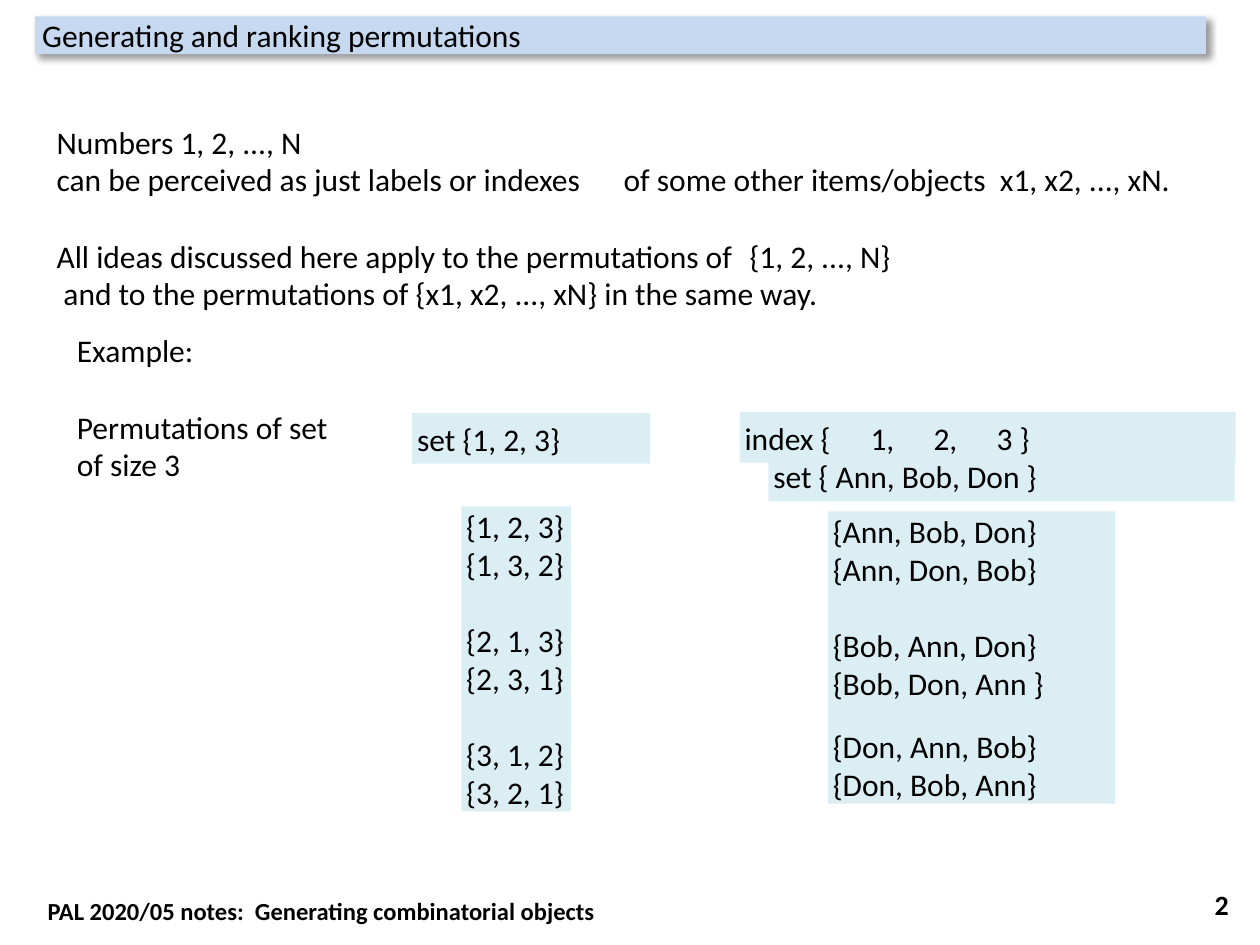
from lxml import etree
from pptx import Presentation
from pptx import util as u
from pptx.dml.color import RGBColor
from pptx.enum import shapes, text
from pptx.oxml import ns

FONT = "Calibri"
BLACK, TITLE_BLUE, PANEL_BLUE = "000000", "C6D9F1", "DBEEF4"
LINE = 22  # points taken by one blank line of 18 pt text
LIST_INSETS = (0.1, 0, 0.1, 0)
HEADING_INSETS = (0.1, 0.13, 0.1, 0.13)
TEXT_INSETS = (0.25, 0.13, 0.25, 0.13)


def color(hex_value):
    return RGBColor.from_string(hex_value)


def add_xml(parent, tag, **attributes):
    return etree.SubElement(parent, ns.qn(tag), attributes)


def place(shape, box):
    for side, length in zip(("left", "top", "width", "height"), box):
        setattr(shape, side, u.Cm(length))


def fill_solid(shape, hex_value):
    shape.fill.solid()
    shape.fill.fore_color.rgb = color(hex_value)


def write(shape, lines, insets, anchor=text.MSO_ANCHOR.TOP, size=18,
          bold=False, align=text.PP_ALIGN.LEFT):
    """Fill the shape; a line is a string or (string, options), with options
    before (pt), indent (cm) and tabs (cm)."""
    frame = shape.text_frame
    frame.word_wrap = True
    frame.auto_size = text.MSO_AUTO_SIZE.NONE
    frame.vertical_anchor = anchor
    for side, length in zip(("left", "top", "right", "bottom"), insets):
        setattr(frame, f"margin_{side}", u.Cm(length))
    for number, line in enumerate(lines):
        content, options = (line, {}) if isinstance(line, str) else line
        paragraph = frame.add_paragraph() if number else frame.paragraphs[0]
        paragraph.alignment = align
        paragraph.space_before = u.Pt(options.get("before", 0))
        properties = paragraph._p.get_or_add_pPr()
        properties.set("marL", str(u.Cm(options.get("indent", 0))))
        properties.set("indent", "0")
        add_xml(properties, "a:buNone")
        if "tabs" in options:
            stops = add_xml(properties, "a:tabLst")
            for position in options["tabs"]:
                add_xml(stops, "a:tab", pos=str(u.Cm(position)), algn="l")
        run = paragraph.add_run()
        run.text = content
        for name, value in dict(name=FONT, size=u.Pt(size), bold=bold).items():
            setattr(run.font, name, value)
        run.font.color.rgb = color(BLACK)


def add_soft_shadow(shape):
    shape.shadow.inherit = False
    effects = shape._element.spPr.find(ns.qn("a:effectLst"))
    shadow = add_xml(effects, "a:outerShdw", blurRad=str(u.Pt(4)),
                     dist=str(u.Pt(3)), dir="2700000", algn="tl",
                     rotWithShape="0")
    black = add_xml(shadow, "a:srgbClr", val=BLACK)
    add_xml(black, "a:alpha", val="40000")


def add_title(slide, content):
    title = slide.shapes.title
    place(title, (0.71, 0.33, 23.6, 0.76))
    fill_solid(title, TITLE_BLUE)
    add_soft_shadow(title)
    write(title, [content], (0.14, 0, 0, 0), text.MSO_ANCHOR.MIDDLE)


def add_note(slide, box, lines, **style):
    note = slide.shapes.add_textbox(*map(u.Cm, box))
    write(note, lines, TEXT_INSETS, **style)


def add_panel(slide, box, lines, insets, anchor=text.MSO_ANCHOR.TOP):
    panel = slide.shapes.add_shape(shapes.MSO_SHAPE.RECTANGLE,
                                   *map(u.Cm, box))
    panel.shadow.inherit = False
    panel.line.fill.background()
    fill_solid(panel, PANEL_BLUE)
    write(panel, lines, insets, anchor)


def add_permutations(slide, box, pairs, gaps):
    """List pairs of permutations, with a gap in points before each pair."""
    lines = []
    for (first, second), gap in zip(pairs, gaps):
        lines += [(first, {"before": gap}), second]
    add_panel(slide, box, lines, LIST_INSETS, text.MSO_ANCHOR.MIDDLE)


def main():
    deck = Presentation()
    deck.slide_width, deck.slide_height = u.Cm(25.4), u.Cm(19.05)
    slide = deck.slides.add_slide(deck.slide_layouts[1])

    add_title(slide, "Generating and ranking permutations")
    explanation = slide.placeholders[1]
    place(explanation, (0.89, 2.34, 23.6, 4.11))
    write(explanation, [
        "Numbers 1, 2, ..., N",
        ("can be perceived as just labels or indexes\t"
         "of some other items/objects  x1, x2, ..., xN.", {"tabs": [11.42]}),
        ("All ideas discussed here apply to the permutations of\t"
         "{1, 2, ..., N}", {"before": LINE, "tabs": [14.04]}),
        ("and to the permutations of {x1, x2, ..., xN} in the same way.",
         {"indent": 0.14}),
    ], TEXT_INSETS)

    add_note(slide, (1.3, 6.55, 6, 3.33), [
        "Example:", ("Permutations of set of size 3", {"before": LINE})])

    add_panel(slide, (8.31, 8.33, 4.8, 1.02), ["set {1, 2, 3}"],
              HEADING_INSETS)
    add_permutations(slide, (9.3, 10.21, 2.21, 6.15), [
        ("{1, 2, 3}", "{1, 3, 2}"),
        ("{2, 1, 3}", "{2, 3, 1}"),
        ("{3, 1, 2}", "{3, 2, 1}"),
    ], (0, LINE, LINE))

    add_panel(slide, (15.49, 9.09, 9.4, 1.02), ["set { Ann, Bob, Don }"],
              HEADING_INSETS)
    add_panel(slide, (14.91, 8.31, 10, 1.02),
              [("index {\t1,\t2,\t3 }", {"tabs": [2.31, 3.51, 4.85]})],
              HEADING_INSETS)
    add_permutations(slide, (16.69, 10.31, 5.79, 5.89), [
        ("{Ann, Bob, Don}", "{Ann, Don, Bob}"),
        ("{Bob, Ann, Don}", "{Bob, Don, Ann }"),
        ("{Don, Ann, Bob}", "{Don, Bob, Ann}"),
    ], (0, LINE, 14.6))

    add_note(slide, (0.71, 17.93, 15.4, 0.86),
             ["PAL 2020/05 notes:  Generating combinatorial objects"],
             size=14, bold=True)
    add_note(slide, (19.1, 17.73, 5.92, 1.02), ["2"], size=16, bold=True,
             anchor=text.MSO_ANCHOR.MIDDLE, align=text.PP_ALIGN.RIGHT)
    deck.save("out.pptx")


if __name__ == "__main__":
    main()
